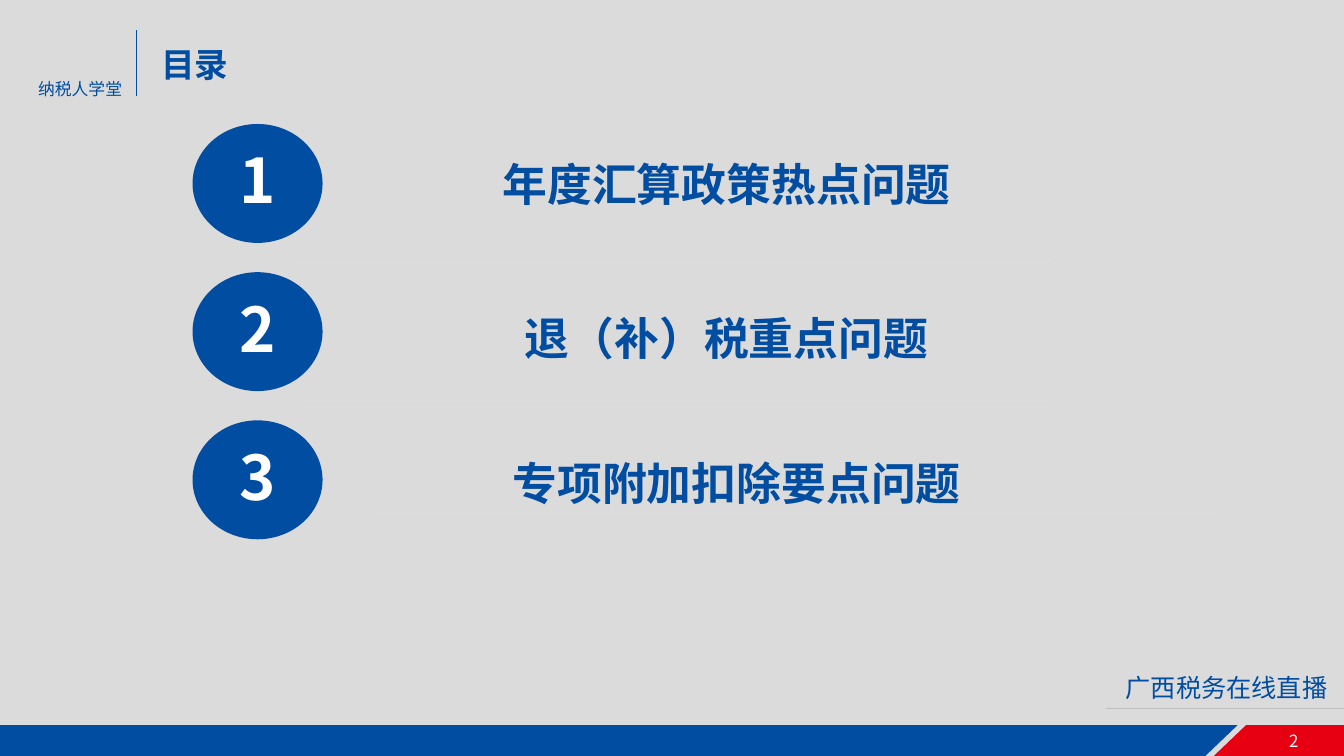
from dataclasses import dataclass

from lxml import etree
from pptx import Presentation
from pptx.dml.color import RGBColor
from pptx.enum.shapes import MSO_CONNECTOR, MSO_SHAPE
from pptx.enum.text import MSO_ANCHOR, MSO_AUTO_SIZE, PP_ALIGN
from pptx.oxml.ns import qn
from pptx.util import Pt

LEFT, CENTER = PP_ALIGN.LEFT, PP_ALIGN.CENTER
MIDDLE = MSO_ANCHOR.MIDDLE
NO_FIT = MSO_AUTO_SIZE.NONE
STRAIGHT = MSO_CONNECTOR.STRAIGHT
OVAL = MSO_SHAPE.OVAL

BLUE = RGBColor(0x00, 0x4D, 0xA1)
RED = RGBColor(0xE6, 0x00, 0x12)
WHITE = RGBColor(0xFF, 0xFF, 0xFF)
BACKGROUND = RGBColor(0xDB, 0xDB, 0xDB)
FOOTER_GRAY = RGBColor(0xBF, 0xBF, 0xBF)
RULE_GRAY = RGBColor(0xD9, 0xD9, 0xD9)

FONT = "Noto Sans CJK SC"
SLIDE_WIDTH, SLIDE_HEIGHT = 960, 540
TITLE_ONLY = 5


@dataclass
class Box:
    left: float
    top: float
    width: float
    height: float

    def inner(self, dx, dy, width, height):
        return Box(self.left + dx, self.top + dy, width, height)

    def emu(self):
        return Pt(self.left), Pt(self.top), Pt(self.width), Pt(self.height)


@dataclass
class Topic:
    """Agenda entry; label and rule offsets count from its row's corner."""
    text: str
    label_dx: float
    label_dy: float
    label_width: float
    rule_dx: float
    rule_dy: float
    rule_width: float


TOPICS = [
    Topic("年度汇算政策热点问题", 77.76, 19.44, 607.68, 75.6, 94.32, 539.28),
    Topic("退（补）税重点问题", 143.28, 23.76, 476.64, 75.6, 94.32, 539.28),
    Topic("专项附加扣除要点问题", 103.68, 21.6, 570.24, 126.72, 69.12, 604.08),
]


def write(frame, text, size, color, bold=False, align=LEFT):
    frame.word_wrap = True
    frame.auto_size = NO_FIT
    frame.vertical_anchor = MIDDLE
    paragraph = frame.paragraphs[0]
    paragraph.alignment = align
    run = paragraph.add_run()
    run.text = text
    font = run.font
    font.size, font.bold, font.name = Pt(size), bold, FONT
    font.color.rgb = color
    east_asian = etree.Element(qn("a:ea"), typeface=FONT)
    run._r.rPr.find(qn("a:latin")).addnext(east_asian)


def add_label(slide, box, text, size, color, bold=False, align=LEFT):
    label = slide.shapes.add_textbox(*box.emu())
    write(label.text_frame, text, size, color, bold, align)


def add_rule(slide, x1, y1, x2, y2, color):
    rule = slide.shapes.add_connector(STRAIGHT, Pt(x1), Pt(y1), Pt(x2), Pt(y2))
    rule.line.color.rgb = color
    rule.line.width = Pt(0.5)
    etree.SubElement(rule._element.spPr, qn("a:effectLst"))


def paint(shape, color):
    shape.shadow.inherit = False
    shape.fill.solid()
    shape.fill.fore_color.rgb = color
    shape.line.fill.background()


def add_band(slide, corners, color):
    builder = slide.shapes.build_freeform(*corners[0], scale=Pt(1))
    builder.add_line_segments(corners[1:], close=True)
    paint(builder.convert_to_shape(), color)


def add_footer(slide, box):
    left, top = box.left, box.top
    right, base = left + box.width, top + 23
    band_top = top + 41.9
    bottom = top + box.height
    add_band(slide, [(left, band_top), (left + 883.5, band_top),
                     (left + 861.3, bottom), (left, bottom)], BLUE)
    add_band(slide, [(left + 889.8, band_top), (right, band_top),
                     (right, bottom), (left + 867, bottom)], RED)
    add_label(slide, box.inner(913.68, 41.9, 38.88, 21.6), "2", 12, WHITE)
    add_rule(slide, left + 789.84, top + 29.66, right + 2.6, top + 29.66, FOOTER_GRAY)
    add_label(slide, box.inner(797.04, 0, 186.48, 28.8), "广西税务在线直播", 18, BLUE)


def add_header(slide, box):
    rule_x = box.left + 97.2
    add_rule(slide, rule_x, box.top, rule_x, box.top + box.height, BLUE)
    add_label(slide, box.inner(20.16, 30.96, 77.76, 21.6), "纳税人学堂", 12, BLUE)
    title = slide.shapes.title
    title.left, title.top, title.width, title.height = box.inner(108, 6.48, 541.44, 36).emu()
    write(title.text_frame, "目录", 24, BLUE, bold=True)


def add_topic(slide, box, number, topic):
    disc = slide.shapes.add_shape(OVAL, *box.emu())
    paint(disc, BLUE)
    add_label(slide, box.inner(12.24, 9.2, 69.12, 60.48), str(number), 44, WHITE, True, CENTER)
    add_label(slide, box.inner(topic.label_dx, topic.label_dy, topic.label_width, 46.08),
              topic.text, 32, BLUE, True, CENTER)
    rule_x, rule_y = box.left + topic.rule_dx, box.top + topic.rule_dy
    add_rule(slide, rule_x, rule_y, rule_x + topic.rule_width, rule_y, RULE_GRAY)


def add_agenda(slide, box):
    row_pitch = box.height / len(TOPICS)
    for index, topic in enumerate(TOPICS):
        row = box.inner(0, index * row_pitch, 92.88, 84.96)
        add_topic(slide, row, index + 1, topic)


def main():
    deck = Presentation()
    deck.slide_width, deck.slide_height = Pt(SLIDE_WIDTH), Pt(SLIDE_HEIGHT)
    slide = deck.slides.add_slide(deck.slide_layouts[TITLE_ONLY])
    slide.background.fill.solid()
    slide.background.fill.fore_color.rgb = BACKGROUND
    add_footer(slide, Box(0, 476.5, SLIDE_WIDTH, SLIDE_HEIGHT - 476.5))
    add_header(slide, Box(0, 21.6, SLIDE_WIDTH, 46.8))
    add_agenda(slide, Box(137.52, 88.56, 730.8, 317.52))
    deck.save("out.pptx")


if __name__ == "__main__":
    main()
